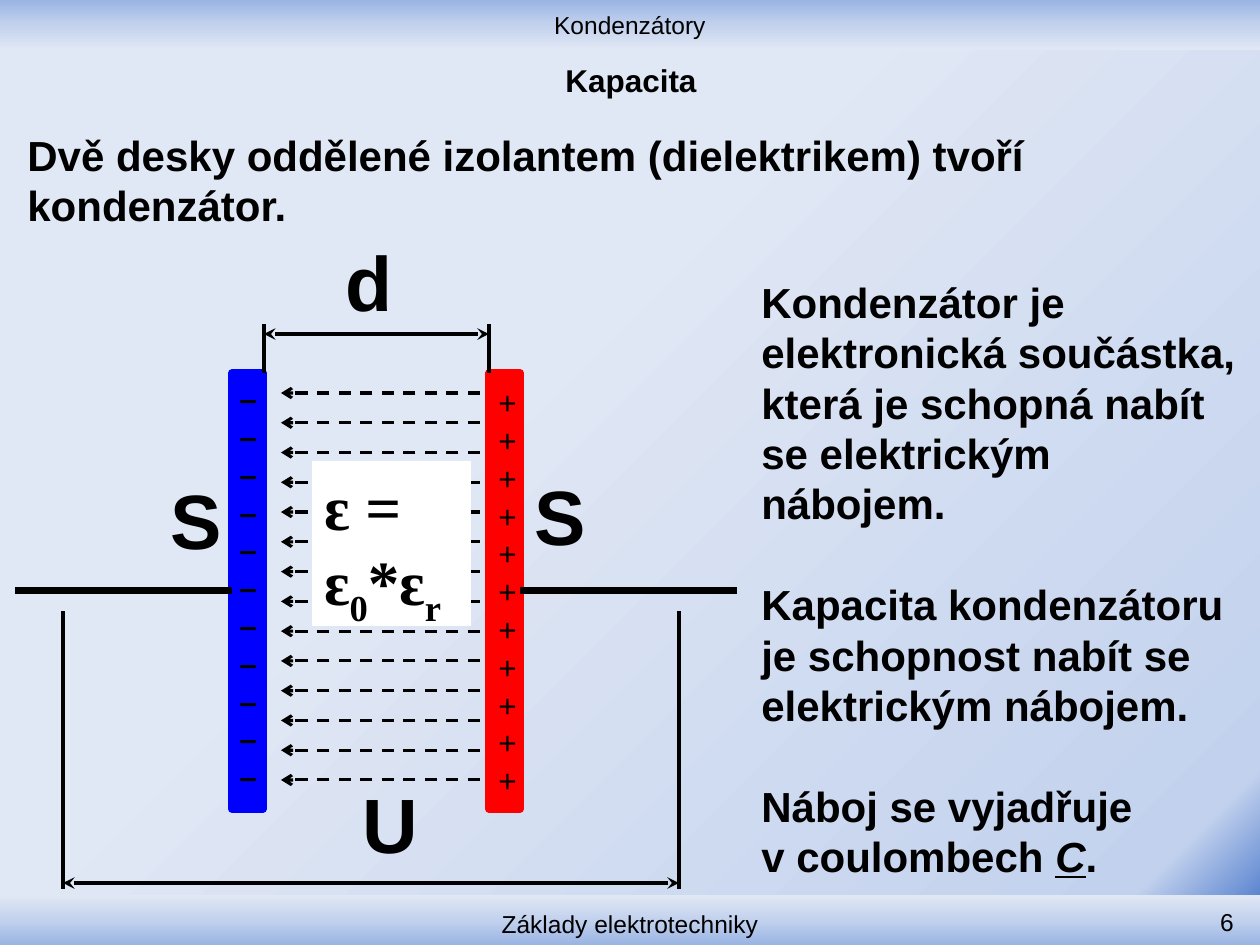
import pptx
import pptx.util
import pptx.enum.shapes
import pptx.enum.text
import pptx.dml.color
import pptx.oxml
import pptx.oxml.ns

PX = 914400 / 126
HUE = {"black": "000000", "white": "FFFFFF", "red": "FF0000", "blue": "0000FF",
       "deep": "3468C5", "mid": "C2D1ED", "pale": "E1E8F5", "bar": "9AB5E4"}
KIND = pptx.enum.shapes.MSO_SHAPE.RECTANGLE
SIDE = pptx.enum.text.PP_ALIGN
SPOT = pptx.enum.text.MSO_ANCHOR
NS = pptx.oxml.ns.nsdecls("a")


def write(shape, paras, size, bold=True, align=SIDE.LEFT, anchor=SPOT.TOP,
          face="Arial", gaps=()):
    """Fill a shape with paragraphs, each a list of (text, format) runs."""
    frame = shape.text_frame
    frame.word_wrap = True
    frame.vertical_anchor = anchor
    for i, runs in enumerate(paras):
        para = frame.paragraphs[0] if i == 0 else frame.add_paragraph()
        para.alignment = align
        if i in gaps:
            para.space_before = pptx.util.Pt(size * 1.2)
        for text, extra in runs:
            run = para.add_run()
            run.text = text
            form = {"size": pptx.util.Pt(size), "bold": bold, "name": face}
            base = extra.get("base")
            form.update({k: v for k, v in extra.items() if k != "base"})
            for key, val in form.items():
                setattr(run.font, key, val)
            run.font.color.rgb = pptx.dml.color.RGBColor.from_string(HUE["black"])
            if base:
                run.font._element.set("baseline", str(base))


def draw(x1, y1, x2, y2, width, dash=False, head=None, tail=None):
    """Draw a black straight line in px, with optional arrowheads."""
    ends = [round(v * PX) for v in (x1, y1, x2, y2)]
    line = slide.shapes.add_connector(pptx.enum.shapes.MSO_CONNECTOR.STRAIGHT, *ends)
    line.line.width = pptx.util.Pt(width)
    line.line.color.rgb = pptx.dml.color.RGBColor.from_string(HUE["black"])
    pen = line.line._get_or_add_ln()
    for tag, val in (("prstDash", "dash" if dash else None), ("headEnd", head), ("tailEnd", tail)):
        if val:
            key = "val" if tag == "prstDash" else "type"
            pen.append(pptx.oxml.parse_xml(f'<a:{tag} {NS} {key}="{val}"/>'))
    line._element.spPr.append(pptx.oxml.parse_xml(f"<a:effectLst {NS}/>"))
    return line


deck = pptx.Presentation()
deck.slide_width = round(1260 * PX)
deck.slide_height = round(945 * PX)
slide = deck.slides.add_slide(deck.slide_layouts[6])

# Background: glow from the lower right corner
back = slide.background.fill
back.gradient()
grad = back._xPr.find(pptx.oxml.ns.qn("a:gradFill"))
stops = "".join(f'<a:gs pos="{pos}000"><a:srgbClr val="{HUE[name]}"/></a:gs>'
                for pos, name in ((0, "deep"), (8, "mid"), (60, "pale"), (100, "pale")))
grad.getparent().replace(grad, pptx.oxml.parse_xml(
    f'<a:gradFill {NS} rotWithShape="1"><a:gsLst>{stops}</a:gsLst>'
    '<a:path path="circle"><a:fillToRect l="100000" t="100000"/></a:path></a:gradFill>'))

# Header and footer bars
for top, high, turn, text, anchor in (
        (0, 50, 90, "Kondenzátory", SPOT.MIDDLE),
        (895, 50, 270, "Základy elektrotechniky", SPOT.BOTTOM)):
    bar = slide.shapes.add_shape(KIND, 0, round(top * PX), deck.slide_width, round(high * PX))
    bar.shadow.inherit = False
    bar.line.fill.background()
    bar.fill.gradient()
    fill = bar._element.spPr.find(pptx.oxml.ns.qn("a:gradFill"))
    stops = "".join(f'<a:gs pos="{pos}000"><a:srgbClr val="{HUE[name]}"/></a:gs>'
                    for pos, name in ((0, "bar"), (50, "mid"), (100, "pale")))
    fill.getparent().replace(fill, pptx.oxml.parse_xml(
        f'<a:gradFill {NS} rotWithShape="1"><a:gsLst>{stops}</a:gsLst>'
        f'<a:lin ang="{turn * 60000}" scaled="0"/></a:gradFill>'))
    write(bar, [[(text, {})]], 14, False, SIDE.CENTER, anchor)

# Plates and wires
plates = []
for left, name in ((489, "red"), (232, "blue")):
    plate = slide.shapes.add_shape(KIND, *[round(v * PX) for v in (left, 373, 31, 436)])
    plate.shadow.inherit = False
    tone = pptx.dml.color.RGBColor.from_string(HUE[name])
    plate.fill.solid()
    plate.fill.fore_color.rgb = tone
    plate.line.color.rgb = tone
    plate.line.width = pptx.util.Pt(4.33)
    plates.append(plate)
draw(520, 591, 737, 591, 4).begin_connect(plates[0], 3)
draw(15, 591, 232, 591, 4).end_connect(plates[1], 1)

# Field lines between the plates
for i in range(14):
    y = 393 + i * 387 / 13
    draw(480, y, 281, y, 1.75, dash=True, tail="arrow")

# Size marks for voltage and gap
for left, right, y, top, low in ((63, 679, 883, 611, 889), (264, 489, 334, 324, 373)):
    draw(left, y, right, y, 2.25, head="stealth", tail="stealth")
    for x in (left, right):
        draw(x, low, x, top, 2.25)

# Text boxes: place in px, paragraphs, size, format
plain = {"bold": False}
body = [
    [("Kondenzátor je elektronická součástka, která je schopná nabít se "
      "elektrickým nábojem.", {})],
    [("Kapacita kondenzátoru je schopnost nabít se elektrickým nábojem.", {})],
    [("Náboj se vyjadřuje", {})],
    [("v coulombech ", {}), ("C", {"italic": True, "underline": True}), (".", {})]]
for place, paras, size, form in (
        ((1176, 893, 70, 50), [[("6", {})]], 14,
         {"bold": False, "align": SIDE.RIGHT, "anchor": SPOT.BOTTOM}),
        ((64, 55, 1134, 50), [[("Kapacita", {})]], 18,
         {"align": SIDE.CENTER, "anchor": SPOT.MIDDLE}),
        ((15, 123, 1240, 115),
         [[("Dvě desky oddělené izolantem (dielektrikem) tvoří kondenzátor.", {})]], 24, {}),
        ((749, 270, 506, 624), body, 24, {"gaps": (1, 2)}),
        ((486, 377, 39, 432), [[("+", plain)], [("++++++++++", plain)]], 18, {}),
        ((227, 373, 54, 445), [[("– – – – – –– – – – –", {})]], 18, {}),
        ((350, 770, 90, 106), [[("U", {})]], 44, {}),
        ((333, 228, 90, 106), [[("d", {})]], 44, {}),
        ((522, 462, 76, 106), [[("S", {})]], 44, {}),
        ((158, 466, 76, 106), [[("S", {})]], 44, {})):
    box = slide.shapes.add_textbox(*[round(v * PX) for v in place])
    write(box, paras, size, **form)

# Formula on white
card = slide.shapes.add_shape(KIND, *[round(v * PX) for v in (312, 461, 159, 165)])
card.shadow.inherit = False
card.fill.solid()
card.fill.fore_color.rgb = pptx.dml.color.RGBColor.from_string(HUE["white"])
card.line.fill.background()
low = {"base": -25000}
write(card, [[("ԑ =", {})], [("ԑ", {}), ("0", low), ("*ԑ", {}), ("r", low)]], 36,
      face="Times New Roman")

deck.save("out.pptx")
